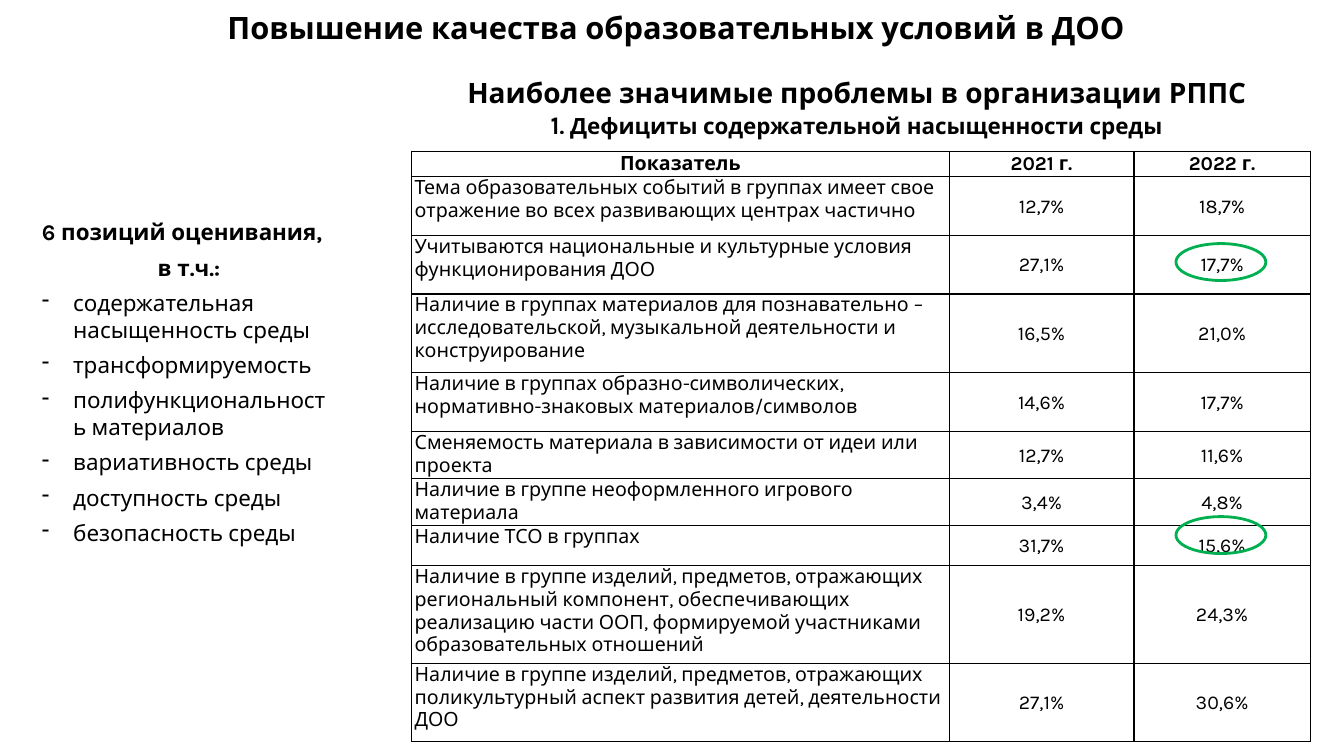
from dataclasses import dataclass

from lxml.etree import SubElement as add_node
from pptx import Presentation
from pptx.dml.color import RGBColor as Color
from pptx.enum.shapes import MSO_SHAPE as Form
from pptx.enum.text import MSO_ANCHOR as Anchor, PP_ALIGN as Align
from pptx.oxml.ns import qn
from pptx.util import Emu, Inches, Pt


@dataclass(frozen=True)
class Theme:
    font: str = "Karla"
    ink: str = "000000"
    mark: str = "00B050"
    title: int = 22
    head: int = 20
    index: int = 18
    body: int = 16
    cell: int = 14
    gap: int = 6
    rule: int = 1
    ring: int = 2


@dataclass(frozen=True)
class Box:
    """Place on a grid of 160 columns by 90 rows."""
    col: float
    row: float
    wide: float
    high: float


@dataclass(frozen=True)
class Entry:
    label: str
    first: str
    last: str
    high: float


THEME = Theme()
WIDTH, HEIGHT = Inches(13.33), Inches(7.5)
COLS, ROWS = 160, 90

TITLE = Box(5, 1, 151, 4.5)
LIST = Box(5, 26, 35, 39.4)
HEAD = Box(44, 8.4, 116, 8.9)
TABLE = Box(49, 18, 107, 69.2)
SPANS = (64, 22, 21)
RINGS = [Box(140, row, 10.7, 4.4) for row in (29, 61.5)]

ITEMS = [
    "содержательная насыщенность среды",
    "трансформируемость",
    "полифункциональность материалов",
    "вариативность среды",
    "доступность среды",
    "безопасность среды",
]

DATA = [
    Entry("Показатель", "2021 г.", "2022 г.", 2.3),
    Entry("Тема образовательных событий в группах имеет свое отражение "
          "во всех развивающих центрах частично", "12,7%", "18,7%", 7),
    Entry("Учитываются национальные и культурные условия "
          "функционирования ДОО", "27,1%", "17,7%", 7),
    Entry("Наличие в группах материалов для познавательно – исследовательской, "
          "музыкальной деятельности и конструирование", "16,5%", "21,0%", 9.35),
    Entry("Наличие в группах образно-символических, "
          "нормативно-знаковых материалов/символов", "14,6%", "17,7%", 7),
    Entry("Сменяемость материала в зависимости от идеи или проекта",
          "12,7%", "11,6%", 4.7),
    Entry("Наличие в группе неоформленного игрового материала",
          "3,4%", "4,8%", 4.7),
    Entry("Наличие ТСО в группах", "31,7%", "15,6%", 4.75),
    Entry("Наличие в группе изделий, предметов, отражающих региональный "
          "компонент, обеспечивающих реализацию части ООП, формируемой "
          "участниками образовательных отношений", "19,2%", "24,3%", 11.65),
    Entry("Наличие в группе изделий, предметов, отражающих поликультурный "
          "аспект развития детей, деятельности ДОО", "27,1%", "30,6%", 9.35),
]


def across(cols: float) -> Emu:
    return Emu(round(WIDTH * cols / COLS))


def down(rows: float) -> Emu:
    return Emu(round(HEIGHT * rows / ROWS))


def place(box: Box) -> tuple:
    return across(box.col), down(box.row), across(box.wide), down(box.high)


def style(run, size: int, bold: bool = False) -> None:
    font = run.font
    font.name, font.size, font.bold = THEME.font, Pt(size), bold
    font.color.rgb = Color.from_string(THEME.ink)


def add_text(slide, box: Box, lines: list, inset: bool = False):
    frame = slide.shapes.add_textbox(*place(box)).text_frame
    frame.word_wrap = True
    if not inset:
        frame.margin_left = frame.margin_right = 0
        frame.margin_top = frame.margin_bottom = 0
    frame.text = "\n".join(lines)
    return frame.paragraphs


def add_dash(para) -> None:
    props = para._p.get_or_add_pPr()
    props.set("marL", str(Inches(0.31)))
    props.set("indent", str(-Inches(0.31)))
    add_node(props, qn("a:buChar"), char="-")


def add_rules(cell) -> None:
    props = cell._tc.get_or_add_tcPr()
    for side in ("lnL", "lnR", "lnT", "lnB"):
        line = add_node(props, qn(f"a:{side}"), w=str(Pt(THEME.rule)))
        fill = add_node(line, qn("a:solidFill"))
        add_node(fill, qn("a:srgbClr"), val=THEME.ink)


def fill_cell(cell, text: str, top: bool, label: bool) -> None:
    add_rules(cell)
    cell.fill.background()
    cell.margin_left = cell.margin_right = Inches(0.03)
    cell.margin_top = cell.margin_bottom = 0
    cell.vertical_anchor = Anchor.TOP if top or label else Anchor.MIDDLE
    cell.text_frame.text = text
    para = cell.text_frame.paragraphs[0]
    if label and not top:
        para.space_before = para.space_after = Pt(THEME.gap)
    else:
        para.alignment, para.line_spacing = Align.CENTER, 1.07
    style(para.runs[0], THEME.cell, top)


def add_grid(slide) -> None:
    table = slide.shapes.add_table(len(DATA), len(SPANS), *place(TABLE)).table
    table.first_row = table.horz_banding = False
    for col, span in zip(table.columns, SPANS):
        col.width = across(span)
    for i, entry in enumerate(DATA):
        table.rows[i].height = down(entry.high)
        for j, text in enumerate((entry.label, entry.first, entry.last)):
            fill_cell(table.cell(i, j), text, i == 0, j == 0)


def add_ring(slide, box: Box) -> None:
    ring = slide.shapes.add_shape(Form.OVAL, *place(box))
    ring.shadow.inherit = False
    ring.fill.background()
    ring.line.color.rgb = Color.from_string(THEME.mark)
    ring.line.width = Pt(THEME.ring)


def main() -> None:
    deck = Presentation()
    deck.slide_width, deck.slide_height = WIDTH, HEIGHT
    slide = deck.slides.add_slide(deck.slide_layouts[6])

    # Slide title
    title, = add_text(slide, TITLE, ["Повышение качества образовательных условий в ДОО"])
    title.alignment = Align.CENTER
    style(title.runs[0], THEME.title, True)

    # List of rated aspects
    lead = ["6 позиций оценивания,", "в т.ч.:"]
    paras = add_text(slide, LIST, lead + ITEMS)
    for i, para in enumerate(paras):
        para.space_before = Pt(THEME.gap)
        style(para.runs[0], THEME.body, i < len(lead))
        if i >= len(lead):
            add_dash(para)
    paras[1].alignment = Align.CENTER

    # Table heading
    head, sub = add_text(
        slide, HEAD, ["Наиболее значимые проблемы в организации РППС", "1"], inset=True)
    head.alignment = sub.alignment = Align.CENTER
    style(head.runs[0], THEME.head, True)
    style(sub.runs[0], THEME.index, True)
    rest = sub.add_run()
    rest.text = ". Дефициты содержательной насыщенности среды"
    style(rest, THEME.body, True)

    # Table and the rings over its key values
    add_grid(slide)
    for box in RINGS:
        add_ring(slide, box)

    deck.save("out.pptx")


if __name__ == "__main__":
    main()
